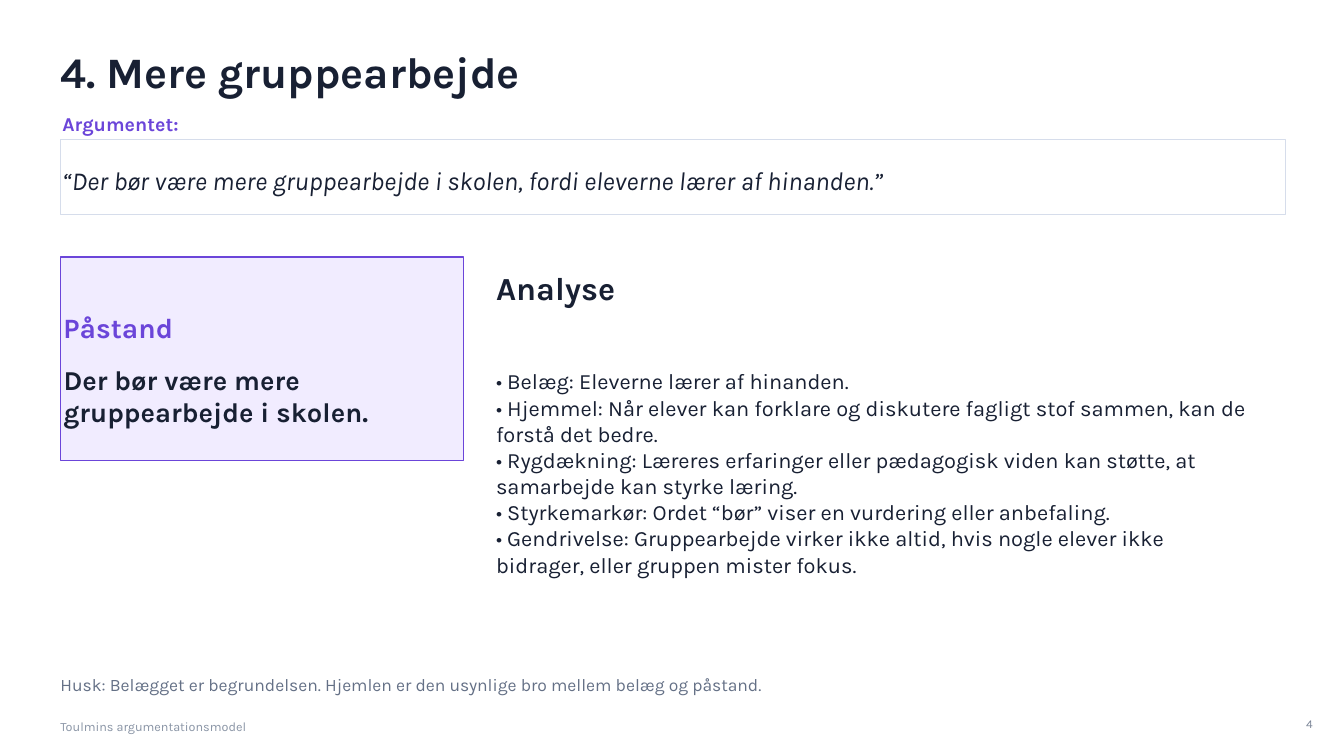
from pptx import Presentation
from pptx.dml.color import RGBColor
from pptx.enum.shapes import MSO_SHAPE as Shape
from pptx.enum.text import MSO_ANCHOR as Anchor, PP_ALIGN as Align
from pptx.util import Pt

PX = 9144  # EMU per px, 100 px to the inch
FONT = "Karla"

WHITE = RGBColor(0xFF, 0xFF, 0xFF)
INK = RGBColor(0x18, 0x20, 0x33)
PURPLE = RGBColor(0x6B, 0x45, 0xD9)
LILAC = RGBColor(0xF1, 0xEC, 0xFF)
BORDER = RGBColor(0xD6, 0xDD, 0xEB)
REMINDER_GREY = RGBColor(0x64, 0x70, 0x86)
FOOTER_GREY = RGBColor(0x89, 0x94, 0xA5)
NUMBER_GREY = RGBColor(0x79, 0x83, 0x95)

MARGIN = 60
CLAIM_LEFT = 63
ANALYSIS_LEFT = 492

CLAIM = ["Der bør være mere", "gruppearbejde i skolen."]
ANALYSIS = [
    "• Belæg: Eleverne lærer af hinanden.",
    "• Hjemmel: Når elever kan forklare og diskutere fagligt stof sammen, "
    "kan de forstå det bedre.",
    "• Rygdækning: Læreres erfaringer eller pædagogisk viden kan støtte, "
    "at samarbejde kan styrke læring.",
    "• Styrkemarkør: Ordet “bør” viser en vurdering eller anbefaling.",
    "• Gendrivelse: Gruppearbejde virker ikke altid, hvis nogle elever ikke "
    "bidrager, eller gruppen mister fokus.",
]


def to_emu(*lengths):
    return [length * PX for length in lengths]


def add_text(slide, box, *lines, size, color=INK, bold=False, italic=False,
             align=Align.LEFT):
    frame = slide.shapes.add_textbox(*to_emu(*box)).text_frame
    frame.word_wrap = True
    frame.vertical_anchor = Anchor.MIDDLE
    frame.margin_left = frame.margin_right = 0
    frame.margin_top = frame.margin_bottom = 0
    frame.text = "\n".join(lines)
    for paragraph in frame.paragraphs:
        paragraph.alignment = align
        for run in paragraph.runs:
            font = run.font
            font.name = FONT
            font.size = Pt(size)
            font.bold = bold
            font.italic = italic
            font.color.rgb = color


def add_panel(slide, box, fill, line, line_width):
    panel = slide.shapes.add_shape(Shape.RECTANGLE, *to_emu(*box))
    panel.shadow.inherit = False
    panel.fill.solid()
    panel.fill.fore_color.rgb = fill
    panel.line.color.rgb = line
    panel.line.width = Pt(line_width)


def main():
    deck = Presentation()
    deck.slide_width, deck.slide_height = to_emu(1333, 750)
    slide = deck.slides.add_slide(deck.slide_layouts[6])

    # Title
    add_text(slide, (MARGIN, 43, 880, 56), "4. Mere gruppearbejde",
             size=31, bold=True)

    # Argument
    add_text(slide, (62, 112, 300, 22), "Argumentet:",
             size=14, color=PURPLE, bold=True)
    add_panel(slide, (MARGIN, 138, 1215, 75), WHITE, BORDER, 0.8)
    add_text(slide, (62, 164, 1210, 30),
             "“Der bør være mere gruppearbejde i skolen, "
             "fordi eleverne lærer af hinanden.”",
             size=18.5, italic=True)

    # Claim
    add_panel(slide, (MARGIN, 255, 400, 202), LILAC, PURPLE, 1)
    add_text(slide, (CLAIM_LEFT, 305, 350, 40), "Påstand",
             size=20, color=PURPLE, bold=True)
    add_text(slide, (CLAIM_LEFT, 355, 385, 75), *CLAIM, size=19.5, bold=True)

    # Analysis
    add_text(slide, (ANALYSIS_LEFT, 263, 310, 45), "Analyse",
             size=23, bold=True)
    add_text(slide, (ANALYSIS_LEFT, 355, 750, 228), *ANALYSIS, size=15.6)

    # Reminder and footer
    add_text(slide, (MARGIN, 667, 1070, 25),
             "Husk: Belægget er begrundelsen. Hjemlen er den usynlige bro "
             "mellem belæg og påstand.",
             size=12.5, color=REMINDER_GREY)
    add_text(slide, (MARGIN, 712, 270, 17), "Toulmins argumentationsmodel",
             size=9, color=FOOTER_GREY)
    add_text(slide, (1292, 708, 10, 20), "4",
             size=8.5, color=NUMBER_GREY, align=Align.RIGHT)

    deck.save("out.pptx")


if __name__ == "__main__":
    main()
